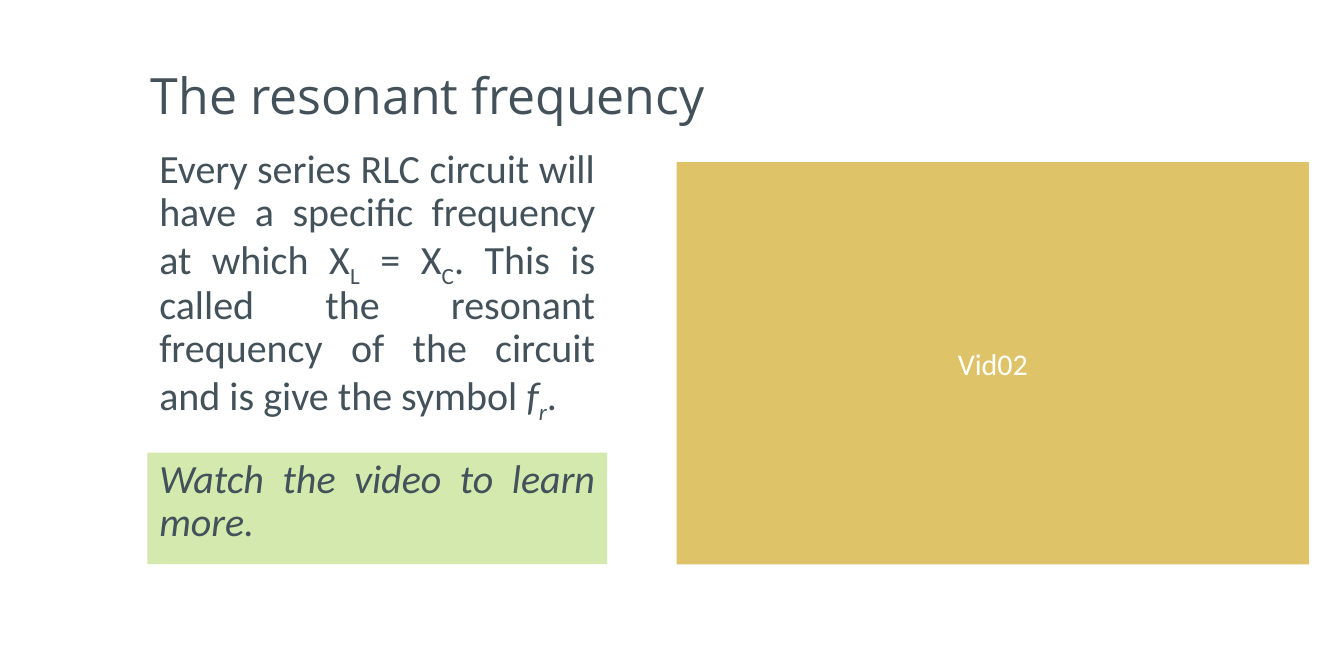
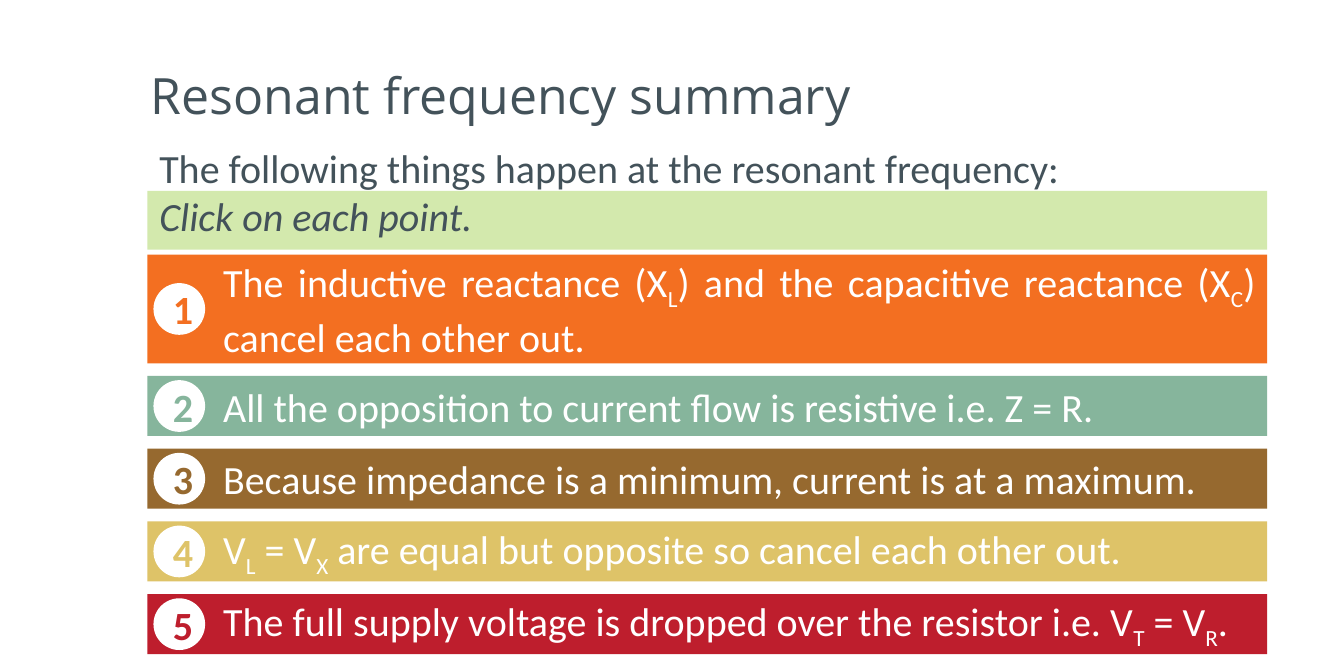
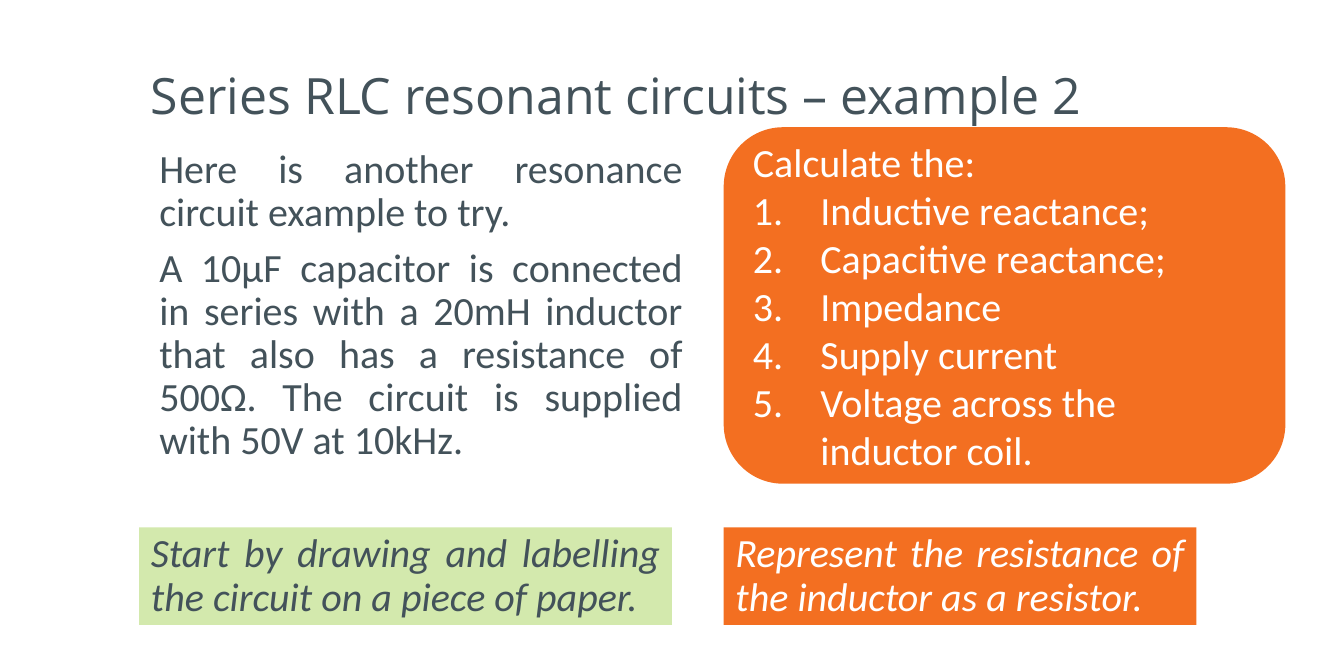
"""Build three slides on resonance in series RLC circuits."""
from lxml.etree import SubElement
from pptx import Presentation
from pptx.dml.color import RGBColor
from pptx.enum.shapes import MSO_SHAPE
from pptx.enum.text import MSO_ANCHOR, PP_ALIGN
from pptx.oxml.ns import qn
from pptx.util import Pt

COLORS = {
    "ink": "43525A", "white": "FFFFFF", "hint": "D3E9AD", "orange": "F36F21",
    "sage": "86B59C", "brown": "96692F", "gold": "DEC368", "red": "BE1E2D",
}
TITLE_BOX = (83.5, 21, 604, 76.2)
LEFT, BODY_TOP = 88.5, 85.8
SUBSCRIPT_MARK, ITALIC_MARK = "|", "*"

FREQUENCY = [
    "Every series RLC circuit will have a specific frequency at which "
    "X|L| = X|C|. This is called the resonant frequency of the circuit "
    "and is give the symbol *f|r|*."
]
POINTS = [
    ("orange", 65.2, "The inductive reactance (X|L|) and the capacitive "
                     "reactance (X|C|) cancel each other out."),
    ("sage", 36, "All the opposition to current flow is resistive i.e. Z = R."),
    ("brown", 36, "Because impedance is a minimum, current is at a maximum."),
    ("gold", 36, "V|L| = V|X| are equal but opposite so cancel each other out."),
    ("red", 36, "The full supply voltage is dropped over the resistor "
                "i.e. V|T| = V|R|."),
]
EXAMPLE = [
    "Here is another resonance circuit example to try.",
    "A 10μF capacitor is connected in series with a 20mH inductor that also "
    "has a resistance of 500Ω. The circuit is supplied with 50V at 10kHz.",
]
TASKS = [
    "Calculate the:", "Inductive reactance;", "Capacitive reactance;",
    "Impedance", "Supply current", "Voltage across the inductor coil.",
]


def rgb(name):
    return RGBColor.from_string(COLORS[name])


def write(shape, texts, color="ink", size=24, font="Calibri", bold=False,
          italic=False, align=PP_ALIGN.LEFT, anchor=MSO_ANCHOR.MIDDLE,
          spacing=None, before=None):
    frame = shape.text_frame
    frame.word_wrap = True
    frame.vertical_anchor = anchor
    for index, text in enumerate(texts):
        paragraph = frame.add_paragraph() if index else frame.paragraphs[0]
        paragraph.alignment = align
        paragraph.line_spacing = spacing
        paragraph.space_before = before
        for slanted, phrase in enumerate(text.split(ITALIC_MARK)):
            for lowered, words in enumerate(phrase.split(SUBSCRIPT_MARK)):
                if not words:
                    continue
                run = paragraph.add_run()
                run.text = words
                run.font.name, run.font.size = font, Pt(size)
                run.font.bold = bold
                run.font.italic = italic or slanted % 2 == 1
                run.font.color.rgb = rgb(color)
                if lowered % 2:
                    run.font._element.set("baseline", "-25000")


def add_block(slide, box, fill, kind=MSO_SHAPE.RECTANGLE):
    block = slide.shapes.add_shape(kind, *map(Pt, box))
    block.shadow.inherit = False
    block.fill.solid()
    block.fill.fore_color.rgb = rgb(fill)
    block.line.fill.background()
    return block


def write_prose(shape, texts, **style):
    write(shape, texts, align=PP_ALIGN.JUSTIFY, anchor=MSO_ANCHOR.TOP,
          spacing=0.9, before=Pt(7.3), **style)


def add_body(slide, texts, width, height):
    body = slide.shapes.add_textbox(*map(Pt, (LEFT, BODY_TOP, width, height)))
    write_prose(body, texts)


def add_hint(slide, text, box, fill="hint", color="ink"):
    write_prose(add_block(slide, box, fill), [text], color=color, italic=True)


def add_slide(deck, title):
    slide = deck.slides.add_slide(deck.slide_layouts[6])
    heading = slide.shapes.add_textbox(*map(Pt, TITLE_BOX))
    write(heading, [title], size=30, font="Open Sans", spacing=0.9)
    return slide


def add_points(slide, top, width, gap=7.6, badge=31):
    for number, (color, height, text) in enumerate(POINTS, 1):
        bar = add_block(slide, (LEFT, top, width, height), color)
        bar.text_frame.margin_left = Pt(45.4)
        write(bar, [text], color="white", align=PP_ALIGN.JUSTIFY)
        disc = add_block(slide, (LEFT + 3.6, top + (height - badge) / 2, badge, badge),
                         "white", MSO_SHAPE.OVAL)
        write(disc, [str(number)], color=color, bold=True, align=PP_ALIGN.CENTER)
        top += height + gap


def number_items(paragraphs, indent=Pt(40.5)):
    for paragraph in paragraphs:
        properties = paragraph._p.get_or_add_pPr()
        properties.set("marL", str(indent))
        properties.set("indent", str(-indent))
        SubElement(properties, qn("a:buFont"), typeface="+mj-lt")
        SubElement(properties, qn("a:buAutoNum"), type="arabicPeriod")


def main():
    deck = Presentation()
    deck.slide_width, deck.slide_height = Pt(806.4), Pt(394)

    frequency = add_slide(deck, "The resonant frequency")
    add_body(frequency, FREQUENCY, 275.8, 185)
    add_hint(frequency, "Watch the video to learn more.", (LEFT, 271.4, 275.8, 67))
    video = add_block(frequency, (406, 97.2, 379.4, 241.2), "gold")
    write(video, ["Vid02"], color="white", size=18, align=PP_ALIGN.CENTER)

    summary = add_slide(deck, "Resonant frequency summary")
    add_body(summary, ["The following things happen at the resonant frequency:"],
             671.8, 28.8)
    add_points(summary, 152.7, 671.8)
    add_hint(summary, "Click on each point.", (LEFT, 114.5, 671.8, 35.3))

    example = add_slide(deck, "Series RLC resonant circuits – example 2")
    tasks = add_block(example, (434.2, 76.3, 337, 213.8), "orange",
                      MSO_SHAPE.ROUNDED_RECTANGLE)
    write(tasks, TASKS, color="white")
    number_items(tasks.text_frame.paragraphs[1:])
    add_hint(example, "Start by drawing and labelling the circuit on a piece of paper.",
             (83.5, 316.3, 319.7, 58.5))
    add_body(example, EXAMPLE, 328.3, 203.8)
    add_hint(example, "Represent the resistance of the inductor as a resistor.",
             (434.2, 316.3, 283.7, 58.5), "orange", "white")

    deck.save("out.pptx")


if __name__ == "__main__":
    main()
